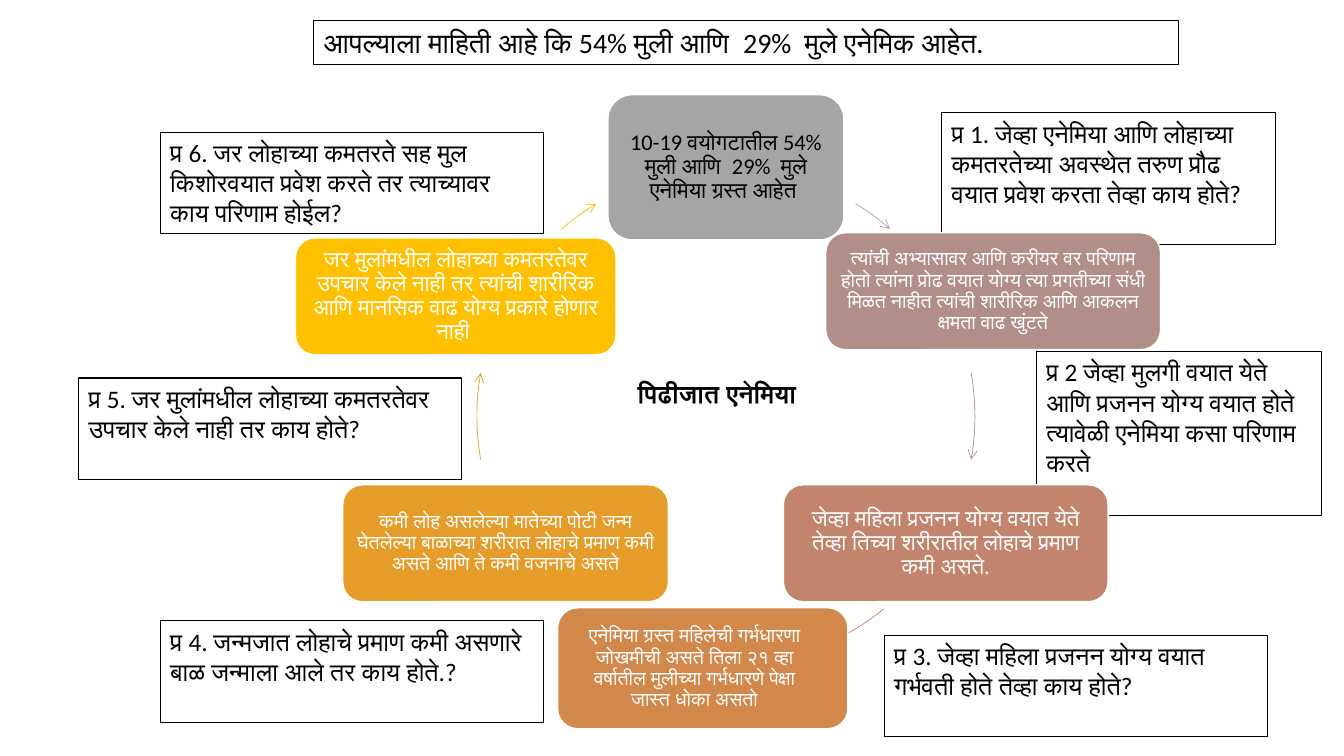
from lxml import etree
from pptx import Presentation
from pptx.dml.color import RGBColor
from pptx.enum.shapes import MSO_SHAPE as Preset
from pptx.enum.text import MSO_ANCHOR as Anchor, PP_ALIGN as Align
from pptx.oxml.ns import qn
from pptx.util import Inches, Pt

COLORS = {
    "ink": "000000", "paper": "FFFFFF", "adolescents": "A5A5A5",
    "career": "B18F88", "fertile": "C2846C", "pregnancy": "D2884A",
    "newborn": "E69C28", "untreated": "FFC000",
}

STAGES = [
    ((6.03, 0.94, 2.34, 1.44), "adolescents", "ink", 16, (0.07, 0.07),
     "10-19 वयोगटातील 54% मुली आणि  29%  मुले एनेमिया ग्रस्त आहेत "),
    ((8.19, 2.31, 3.32, 1.16), "career", "paper", 14, (0.06, 0.06),
     "त्यांची अभ्यासावर आणि करीयर वर परिणाम होतो त्यांना प्रोढ वयात योग्य त्या प्रगतीच्या संधी "
     "मिळत नाहीत त्यांची शारीरिक आणि आकलन क्षमता वाढ खुंटते"),
    ((7.77, 4.81, 3.22, 1.16), "fertile", "paper", 16, (0.07, 0.07),
     "जेव्हा महिला प्रजनन योग्य वयात येते तेव्हा तिच्या शरीरातील लोहाचे प्रमाण कमी असते."),
    ((5.53, 6.03, 2.88, 1.2), "pregnancy", "paper", 14, (0.1, 0.26),
     "एनेमिया ग्रस्त महिलेची गर्भधारणा जोखमीची असते तिला २१ व्हा वर्षातील मुलीच्या "
     "गर्भधारणे पेक्षा जास्त धोका असतो"),
    ((3.4, 4.81, 3.23, 1.16), "newborn", "paper", 14, (0.02, 0.02),
     "कमी लोह असलेल्या मातेच्या पोटी जन्म घेतलेल्या बाळाच्या शरीरात लोहाचे प्रमाण कमी असते "
     "आणि ते कमी वजनाचे असते"),
    ((2.93, 2.36, 3.18, 1.16), "untreated", "paper", 16, (0.07, 0.07),
     "जर मुलांमधील लोहाच्या कमतरतेवर उपचार केले नाही तर त्यांची शारीरिक आणि मानसिक वाढ "
     "योग्य प्रकारे होणार नाही "),
]

CYCLE = (4.73, 1.66, 4.94, 4.94)
ARROWS = [
    (301.4, 311.2, "adolescents"), (350, 10, "career"), (50.6, 65.9, "fertile"),
    (170, 190, "newborn"), (228.8, 238.6, "untreated"),
]

QUESTIONS = [
    ((9.34, 1.12, 3.31, 1.31),
     "प्र 1. जेव्हा एनेमिया आणि लोहाच्या कमतरतेच्या अवस्थेत तरुण प्रौढ वयात प्रवेश करता तेव्हा काय होते?"),
    ((10.28, 3.49, 2.83, 1.62),
     "प्र 2 जेव्हा मुलगी वयात येते आणि प्रजनन योग्य वयात होते त्यावेळी एनेमिया कसा परिणाम करते"),
    ((8.77, 6.3, 3.8, 1.01),
     "प्र 3. जेव्हा महिला प्रजनन योग्य वयात गर्भवती होते तेव्हा काय होते?"),
    ((1.59, 6.16, 3.8, 1.01),
     "प्र 4. जन्मजात लोहाचे प्रमाण कमी असणारे बाळ जन्माला आले तर काय होते.?"),
    ((0.78, 3.75, 3.8, 1.01),
     "प्र 5. जर मुलांमधील लोहाच्या कमतरतेवर उपचार केले नाही तर काय होते?"),
    ((1.59, 1.31, 3.8, 1.01),
     "प्र 6. जर लोहाच्या कमतरते सह मुल किशोरवयात प्रवेश करते तर त्याच्यावर काय परिणाम होईल?"),
]


def apply(target, values):
    for name, value in values.items():
        setattr(target, name, value)


class AnemiaSlide:
    font = "Calibri"

    def __init__(self, deck):
        self.slide = deck.slides.add_slide(deck.slide_layouts[6])

    def color(self, name):
        return RGBColor.from_string(COLORS[name])

    def add_text(self, owner, text, size, color="ink", bold=False, frame=None, paragraph=None):
        apply(owner.text_frame, {"word_wrap": True, **(frame or {})})
        line = owner.text_frame.paragraphs[0]
        apply(line, paragraph or {"alignment": Align.LEFT})
        run = line.add_run()
        run.text = text
        apply(run.font, {"name": self.font, "size": Pt(size), "bold": bold})
        run.font.color.rgb = self.color(color)

    def shape(self, preset, box, line, width, fill=None):
        item = self.slide.shapes.add_shape(preset, *map(Inches, box))
        item.shadow.inherit = False
        if fill:
            item.fill.solid()
            item.fill.fore_color.rgb = self.color(fill)
        else:
            item.fill.background()
        item.line.color.rgb = self.color(line)
        item.line.width = Pt(width)
        return item

    def stage(self, box, fill, color, size, margins, text):
        item = self.shape(Preset.ROUNDED_RECTANGLE, box, "paper", 1, fill)
        left, right = map(Inches, margins)
        frame = {"vertical_anchor": Anchor.MIDDLE, "margin_left": left, "margin_right": right,
                 "margin_top": Inches(0.07), "margin_bottom": Inches(0.07)}
        paragraph = {"alignment": Align.CENTER, "line_spacing": 0.9}
        self.add_text(item, text, size, color, frame=frame, paragraph=paragraph)

    def arrow(self, start, end, color):
        arc = self.shape(Preset.ARC, CYCLE, color, 0.5)
        for index, degrees in enumerate((start, end)):
            arc.adjustments[index] = degrees * 0.6
        outline = arc.element.spPr.find(qn("a:ln"))
        etree.SubElement(outline, qn("a:tailEnd"), type="arrow")

    def framed(self, box, text, size=18):
        item = self.shape(Preset.RECTANGLE, box, "ink", 0.75)
        self.add_text(item, text, size, frame={"vertical_anchor": Anchor.TOP})

    def label(self, box, text, size):
        item = self.slide.shapes.add_textbox(*map(Inches, box))
        self.add_text(item, text, size, bold=True, paragraph={"alignment": Align.CENTER})


def main():
    deck = Presentation()
    apply(deck, {"slide_width": Inches(13.33), "slide_height": Inches(7.5)})
    page = AnemiaSlide(deck)
    for arrow in ARROWS:
        page.arrow(*arrow)
    page.framed((3.11, 0.2, 8.58, 0.44),
                "आपल्याला माहिती आहे कि 54% मुली आणि  29%  मुले एनेमिक आहेत.", 20)
    for question in QUESTIONS:
        page.framed(*question)
    page.label((5.67, 3.7, 2.88, 0.4), "पिढीजात एनेमिया", 18)
    for stage in STAGES:
        page.stage(*stage)
    deck.save("out.pptx")


if __name__ == "__main__":
    main()
